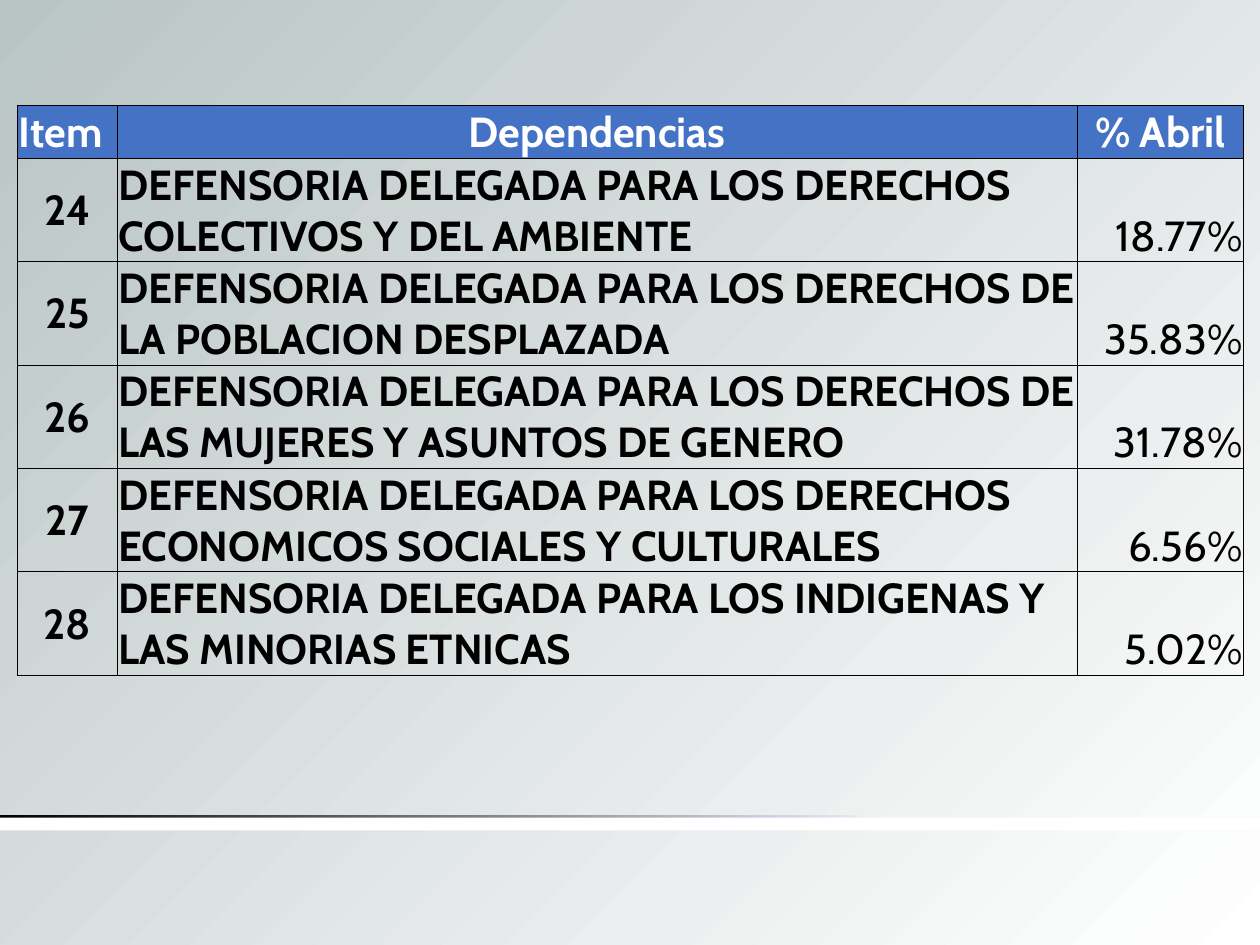
from lxml.etree import SubElement
from pptx import Presentation
from pptx.dml.color import RGBColor
from pptx.enum.shapes import MSO_SHAPE as Shape
from pptx.enum.text import MSO_ANCHOR as Anchor, PP_ALIGN as Align
from pptx.oxml.ns import qn
from pptx.util import Inches, Pt

BLACK = RGBColor(0x00, 0x00, 0x00)
WHITE = RGBColor(0xFF, 0xFF, 0xFF)
BLUE = RGBColor(0x44, 0x72, 0xC4)
PALE_BLUE = RGBColor(0xE1, 0xE8, 0xF5)
GREY = RGBColor(0xB9, 0xC4, 0xC5)

HEADINGS = ("Item", "Dependencias", "% Abril")
DELEGATE = "DEFENSORIA DELEGADA PARA LOS "
OFFICES = (
    ("24", "DERECHOS COLECTIVOS Y DEL AMBIENTE", "18.77%"),
    ("25", "DERECHOS DE LA POBLACION DESPLAZADA", "35.83%"),
    ("26", "DERECHOS DE LAS MUJERES Y ASUNTOS DE GENERO", "31.78%"),
    ("27", "DERECHOS ECONOMICOS SOCIALES Y CULTURALES", "6.56%"),
    ("28", "INDIGENAS Y LAS MINORIAS ETNICAS", "5.02%"),
)


def write(cell, text, color=BLACK, bold=True, align=Align.LEFT, anchor=Anchor.MIDDLE):
    cell.vertical_anchor = anchor
    cell.margin_left = cell.margin_right = cell.margin_top = Inches(0.01)
    cell.margin_bottom = 0
    para = cell.text_frame.paragraphs[0]
    para.alignment = align
    span = para.add_run()
    span.text = text
    span.font.name = "Cabin"
    span.font.size = Pt(24)
    span.font.bold = bold
    span.font.color.rgb = color


def blend(fill, *colors):
    fill.gradient()
    for stop, color in zip(fill.gradient_stops, colors):
        stop.color.rgb = color


class Page:
    def __init__(self, deck):
        self.width, self.height = deck.slide_width, deck.slide_height
        self.slide = deck.slides.add_slide(deck.slide_layouts[6])

    def place(self, left, top, width, height):
        return (int(left * self.width), int(top * self.height),
                int(width * self.width), int(height * self.height))

    def background(self, center, edge):
        blend(self.slide.background.fill, center, edge)
        gradient = self.slide.element.find(".//" + qn("a:gradFill"))
        gradient.remove(gradient.find(qn("a:lin")))
        circle = SubElement(gradient, qn("a:path"), path="circle")
        SubElement(circle, qn("a:fillToRect"), l="100000", t="100000")

    def bar(self, share, *colors):
        box = self.slide.shapes.add_shape(Shape.RECTANGLE, *self.place(*share))
        box.shadow.inherit = False
        box.line.fill.background()
        if len(colors) > 1:
            blend(box.fill, *colors)
            box.fill.gradient_angle = 0
        else:
            box.fill.solid()
            box.fill.fore_color.rgb = colors[0]

    def border(self, cell):
        properties = cell._tc.get_or_add_tcPr()
        for index, side in enumerate(("lnL", "lnR", "lnT", "lnB")):
            line = properties.makeelement(qn("a:" + side), {"w": str(Pt(0.5))})
            paint = SubElement(line, qn("a:solidFill"))
            SubElement(paint, qn("a:srgbClr"), val=str(BLACK))
            properties.insert(index, line)

    def table(self, share, columns, lines):
        rows = 1 + len(OFFICES)
        frame = self.slide.shapes.add_table(rows, len(columns), *self.place(*share))
        table = frame.table
        table.horz_banding = False
        for column, width in zip(table.columns, columns):
            column.width = Inches(width)
        unit = frame.height / sum(lines)
        for row, count in zip(table.rows, lines):
            row.height = int(unit * count)
        write(table.cell(0, 0), HEADINGS[0], WHITE, anchor=Anchor.BOTTOM)
        for column in (1, 2):
            write(table.cell(0, column), HEADINGS[column], WHITE, align=Align.CENTER)
        for row, (item, office, percent) in enumerate(OFFICES, 1):
            write(table.cell(row, 0), item, align=Align.CENTER)
            write(table.cell(row, 1), DELEGATE + office)
            write(table.cell(row, 2), percent, bold=False, align=Align.RIGHT,
                  anchor=Anchor.BOTTOM)
        for index, cell in enumerate(table.iter_cells()):
            if index < len(HEADINGS):
                cell.fill.solid()
                cell.fill.fore_color.rgb = BLUE
            else:
                cell.fill.background()
            self.border(cell)


def main():
    deck = Presentation()
    deck.slide_width, deck.slide_height = Inches(10), Inches(7.5)
    page = Page(deck)
    page.background(WHITE, GREY)
    page.bar((0, 6.47 / 7.5, 0.68, 0.05 / 7.5), BLACK, PALE_BLUE)
    page.bar((0, 6.49 / 7.5, 1, 0.1 / 7.5), WHITE)
    page.table((0.014, 0.84 / 7.5, 0.97, 0.6), (0.79, 7.62, 1.32), (1, 2, 2, 2, 2, 2))
    deck.save("out.pptx")


if __name__ == "__main__":
    main()
